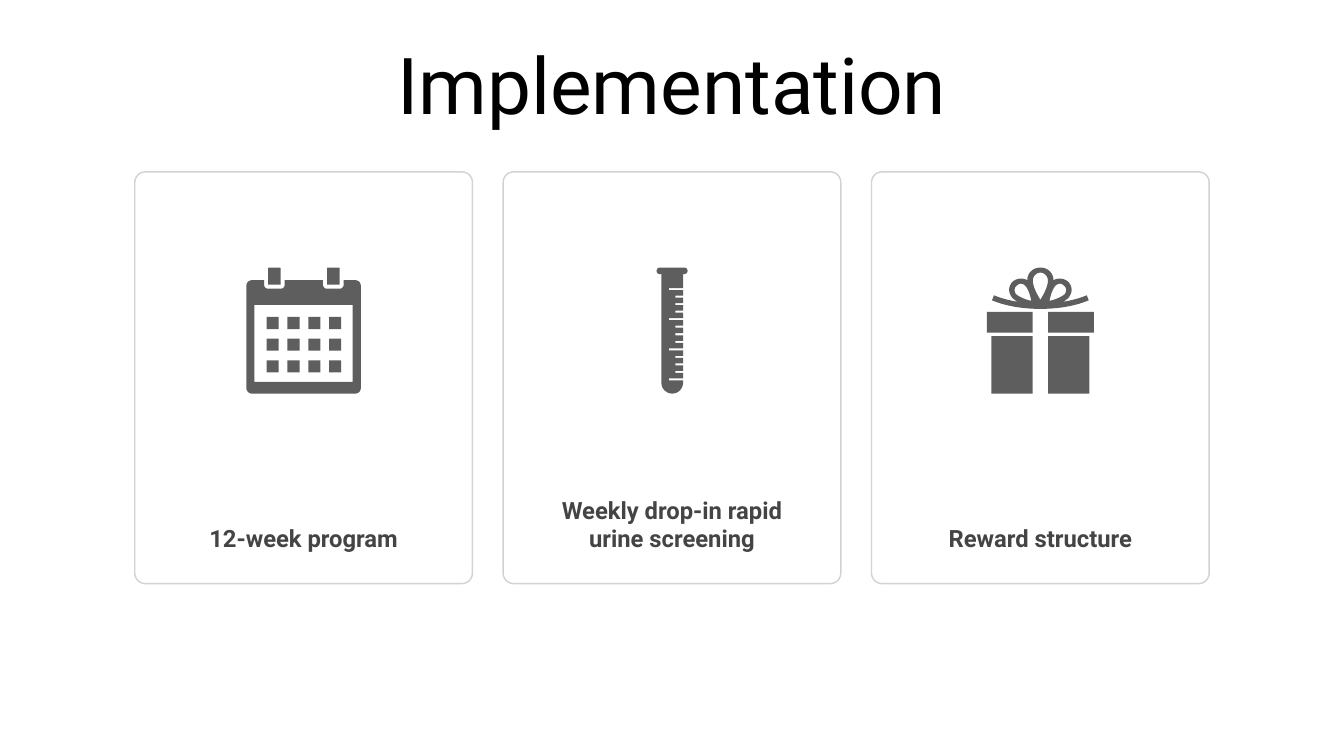
from math import cos, radians, sin

from pptx import Presentation
from pptx.dml.color import RGBColor
from pptx.enum.shapes import MSO_SHAPE
from pptx.enum.text import MSO_ANCHOR, PP_ALIGN
from pptx.util import Inches, Pt

COLORS = {"title": "000000", "card": "FFFFFF", "border": "D2D2D2",
          "caption": "444444", "icon": "5E5E5E"}
FONT = "Roboto"
WIDTH, HEIGHT = 26.67, 15
CARD_W, CARD_H, CARD_TOP, GAP = 6.7, 8.17, 3.41, 0.61
ICON_ROWS, GIFT_COLS = 250, 212


def color(name):
    return RGBColor.from_string(COLORS[name])


def rect(x, y, w, h):
    return [(x, y), (x + w, y), (x + w, y + h), (x, y + h)]


def arc(cx, cy, r, start, end, steps=10):
    angles = [radians(start + (end - start) * i / steps) for i in range(steps + 1)]
    return [(cx + r * cos(a), cy + r * sin(a)) for a in angles]


def curve(start, *segments, steps=10):
    points = [start]
    for x1, y1, x2, y2, x3, y3 in segments:
        x0, y0 = points[-1]
        for i in range(1, steps + 1):
            t = i / steps
            a, b, c, d = (1 - t) ** 3, 3 * t * (1 - t) ** 2, 3 * t * t * (1 - t), t ** 3
            points.append((a * x0 + b * x1 + c * x2 + d * x3,
                           a * y0 + b * y1 + c * y2 + d * y3))
    return points


def mirror(points):
    return [(GIFT_COLS - x, y) for x, y in reversed(points)]


def calendar_contours():
    def tab(x):
        return arc(x + 2, 2, 2, 180, 270) + arc(x + 23, 2, 2, 270, 360) + [(x + 25, 34), (x, 34)]

    def notch(x):
        return ([(x, 25)] + arc(x + 8, 34, 8, 180, 90)
                + arc(x + 33, 34, 8, 90, 0) + [(x + 41, 25)])

    body = (arc(11, 36, 11, 180, 270) + notch(35) + notch(152)
            + arc(216, 36, 11, 270, 360) + arc(216, 239, 11, 0, 90)
            + arc(11, 239, 11, 90, 180))
    days = [rect(40 + 41.4 * col, 98 + 43 * row, 24, 24)
            for row in range(3) for col in range(4)]
    return [tab(43), tab(160), body, rect(16, 74, 195, 153)] + days


def tube_contours():
    outline = arc(7, 6.5, 6.5, 270, 90) + [(10, 13)] + arc(31.5, 228.5, 21.5, 180, 0, 20)
    for i in range(13):
        y = 224 - 14.95 * i
        x = 38 if i % 4 else 25
        outline += [(53, y), (x, y), (x, y - 4), (53, y - 4)]
    return [outline + [(53, 13)] + arc(55.5, 6.5, 6.5, 90, -90)]


def gift_contours():
    bow = curve((106, 0), (91, 0, 80, 11, 80, 25), (71, 20, 59, 21, 51, 28),
                (47, 32, 44, 38, 44, 44), (44, 50, 47, 56, 51, 61),
                (54, 63, 57, 66, 61, 68), (44, 65, 28, 61, 14, 55))
    bow += curve((10, 65), (36, 76, 70, 82, 106, 82))
    middle = curve((106, 10), (98, 10, 91, 17, 91, 26), (91, 38, 100, 54, 106, 64))
    loop = curve((67, 32), (71, 32, 74, 34, 76, 36), (82, 42, 86, 56, 88, 66),
                 (78, 64, 65, 59, 58, 53), (56, 51, 55, 48, 55, 44),
                 (55, 41, 56, 38, 59, 36), (61, 34, 64, 32, 67, 32))
    halves = [loop, rect(0, 88, 90.5, 41), rect(9, 136, 81.5, 114)]
    return [bow + mirror(bow), middle + mirror(middle)] + halves + [mirror(h) for h in halves]


def add_icon(slide, contours, left, top, height):
    unit = Inches(height) / ICON_ROWS
    x0, y0 = Inches(left), Inches(top)
    placed = [[(x0 + x * unit, y0 + y * unit) for x, y in c] for c in contours]
    builder = slide.shapes.build_freeform(*placed[0][0])
    for i, points in enumerate(placed):
        if i:
            builder.move_to(*points[0])
        builder.add_line_segments(points[1:], close=True)
    s = builder.convert_to_shape()
    s.shadow.inherit = False
    s.fill.solid()
    s.fill.fore_color.rgb = color("icon")
    s.line.fill.background()


def set_text(s, text, size, name, anchor, inset, bold=False):
    tf = s.text_frame
    tf.text = text
    tf.word_wrap = True
    tf.vertical_anchor = anchor
    tf.margin_left = tf.margin_right = tf.margin_top = tf.margin_bottom = Inches(inset)
    p = tf.paragraphs[0]
    p.alignment = PP_ALIGN.CENTER
    p.font.name, p.font.size, p.font.bold = FONT, Pt(size), bold
    p.font.color.rgb = color(name)
    return p


def add_title(slide, text, left, top, width, height):
    s = slide.shapes.title
    s.left, s.top, s.width, s.height = map(Inches, (left, top, width, height))
    set_text(s, text, 112, "title", MSO_ANCHOR.MIDDLE, 0.06)


def add_card(slide, caption, contours, left, top, width, height):
    s = slide.shapes.add_shape(MSO_SHAPE.ROUNDED_RECTANGLE,
                               *map(Inches, (left, top, width, height)))
    s.adjustments[0] = 0.031
    s.shadow.inherit = False
    s.fill.solid()
    s.fill.fore_color.rgb = color("card")
    s.line.color.rgb = color("border")
    s.line.width = Pt(2)
    p = set_text(s, caption, 34, "caption", MSO_ANCHOR.BOTTOM, 0.56, bold=True)
    p.space_before = Pt(18)
    icon_h = 0.306 * height
    icon_w = max(x for c in contours for x, _ in c) * icon_h / ICON_ROWS
    add_icon(slide, contours, left + (width - icon_w) / 2, top + 0.2325 * height, icon_h)


def main():
    prs = Presentation()
    prs.slide_width, prs.slide_height = Inches(WIDTH), Inches(HEIGHT)
    slide = prs.slides.add_slide(prs.slide_layouts[5])
    add_title(slide, "Implementation", 1.85, 0.39, WIDTH - 2 * 1.85, HEIGHT / 6)
    cards = [("12-week program", calendar_contours()),
             ("Weekly drop-in rapid urine screening", tube_contours()),
             ("Reward structure", gift_contours())]
    pitch = CARD_W + GAP
    margin = (WIDTH - len(cards) * pitch + GAP) / 2
    for i, (caption, contours) in enumerate(cards):
        add_card(slide, caption, contours, margin + i * pitch, CARD_TOP, CARD_W, CARD_H)
    prs.save("out.pptx")


if __name__ == "__main__":
    main()
